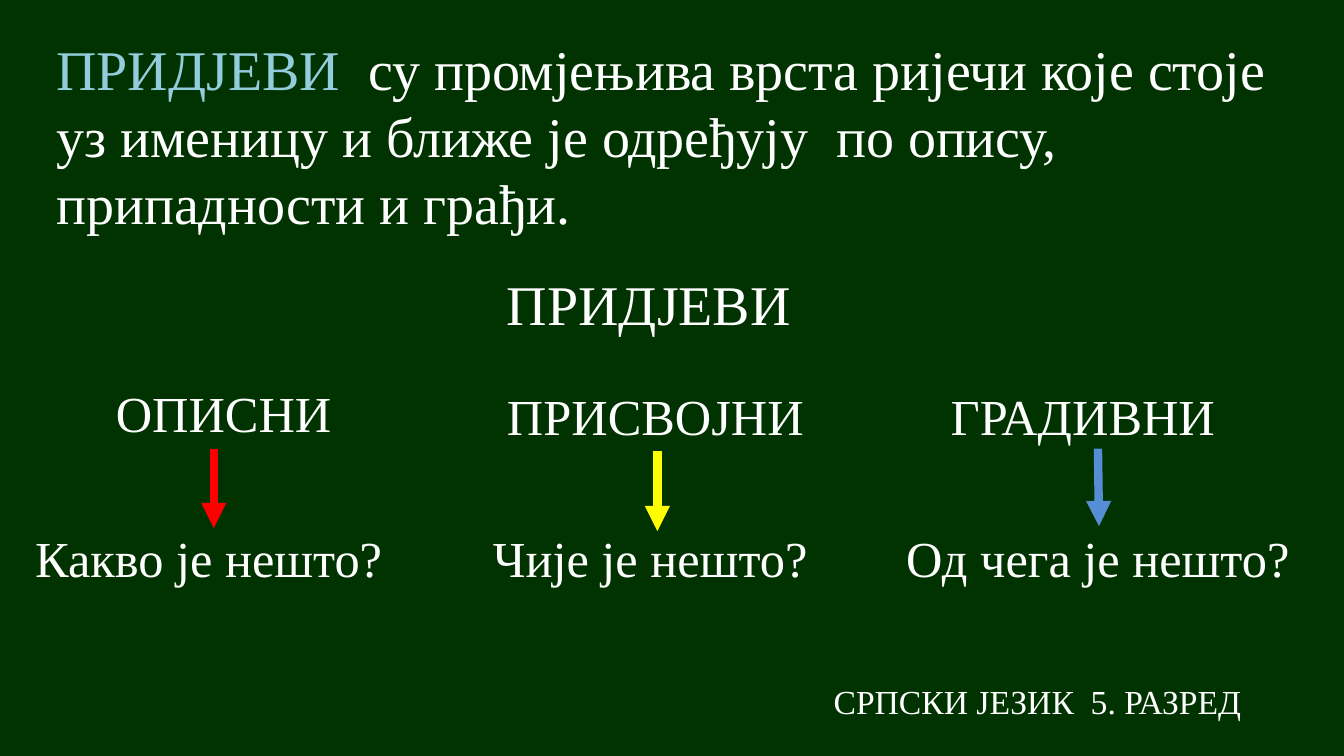
from dataclasses import dataclass

from lxml.etree import SubElement
from pptx import Presentation
from pptx.dml.color import RGBColor
from pptx.enum.shapes import MSO_CONNECTOR
from pptx.enum.text import MSO_AUTO_SIZE
from pptx.oxml.ns import qn
from pptx.util import Inches, Pt


@dataclass(frozen=True)
class Theme:
    font: str = "Times New Roman"
    background: str = "003300"
    text: str = "FFFFFF"
    term: str = "93CDDD"
    red: str = "FF0000"
    yellow: str = "FFFF00"
    blue: str = "558ED5"
    heading_size: int = 40
    branch_size: int = 36
    footer_size: int = 24
    arrow_width: int = 6


THEME = Theme()


def color(hex_code):
    return RGBColor.from_string(hex_code)


def style(run, size, hex_code=THEME.text):
    run.font.name = THEME.font
    run.font.size = Pt(size)
    run.font.color.rgb = color(hex_code)


def add_text(slide, box, text, size):
    """Place one styled paragraph in box (left, top, width, height) and return it."""
    frame = slide.shapes.add_textbox(*map(Inches, box)).text_frame
    frame.word_wrap = True
    frame.auto_size = MSO_AUTO_SIZE.SHAPE_TO_FIT_TEXT
    paragraph = frame.paragraphs[0]
    paragraph.text = text
    style(paragraph.runs[0], size)
    return paragraph


def add_arrow(slide, start, end, hex_code):
    arrow = slide.shapes.add_connector(
        MSO_CONNECTOR.STRAIGHT, *map(Inches, start + end))
    arrow.line.color.rgb = color(hex_code)
    arrow.line.width = Pt(THEME.arrow_width)
    SubElement(arrow.line._get_or_add_ln(), qn("a:tailEnd"), type="triangle")
    SubElement(arrow._element.spPr, qn("a:effectLst"))


def add_definition(slide, box, term, explanation):
    paragraph = add_text(slide, box, term, THEME.heading_size)
    paragraph.runs[0].font.color.rgb = color(THEME.term)
    rest = paragraph.add_run()
    rest.text = explanation
    style(rest, THEME.heading_size)


def add_branch(slide, box, kind, question, kind_at, arrow_at, hex_code):
    """Kind of adjective, arrow, question; kind_at and arrow_at are offsets in box."""
    left, top, width, height = box
    kind_left, kind_top, kind_width = kind_at
    arrow_x, arrow_y, arrow_dx, arrow_dy = arrow_at
    line_height = 0.71
    add_text(slide, (left + kind_left, top + kind_top, kind_width, line_height),
             kind, THEME.branch_size)
    add_text(slide, (left, top + height - line_height, width, line_height),
             question, THEME.branch_size)
    start = (left + arrow_x, top + arrow_y)
    add_arrow(slide, start, (start[0] + arrow_dx, start[1] + arrow_dy), hex_code)


def add_footer(slide, box, text):
    add_text(slide, box, text, THEME.footer_size).line_spacing = 0.9


def main():
    deck = Presentation()
    deck.slide_width, deck.slide_height = Inches(13.33), Inches(7.5)
    slide = deck.slides.add_slide(deck.slide_layouts[6])
    slide.background.fill.solid()
    slide.background.fill.fore_color.rgb = color(THEME.background)

    # Definition and root of the tree
    add_definition(
        slide, (0.46, 0.29, 12.42, 2.12), "ПРИДЈЕВИ",
        "  су промјењива врста ријечи које стоје уз именицу и ближе је "
        "одређују  по опису, припадности и грађи.")
    add_text(slide, (4.93, 2.62, 3.75, 0.77), "ПРИДЈЕВИ", THEME.heading_size)

    # Three kinds of adjectives: left, width, texts, offsets, arrow colour
    branches = [
        (0.25, 3.75, "ОПИСНИ", "Какво је нешто?",
         (0.8, 0, 2.62), (1.87, 0.71, 0, 0.79), THEME.red),
        (4.79, 3.75, "ПРИСВОЈНИ", "Чије је нешто?",
         (0.14, 0.03, 3.19), (1.73, 0.73, 0, 0.8), THEME.yellow),
        (8.89, 4.2, "ГРАДИВНИ", "Од чега је нешто?",
         (0.44, 0.03, 3.19), (2, 0.71, 0.01, 0.77), THEME.blue),
    ]
    for left, width, *parts in branches:
        add_branch(slide, (left, 3.74, width, 2.15), *parts)

    # Subject and grade
    add_footer(slide, (8.17, 6.75, 5.17, 0.46), "СРПСКИ ЈЕЗИК  5. РАЗРЕД")

    deck.save("out.pptx")


if __name__ == "__main__":
    main()
